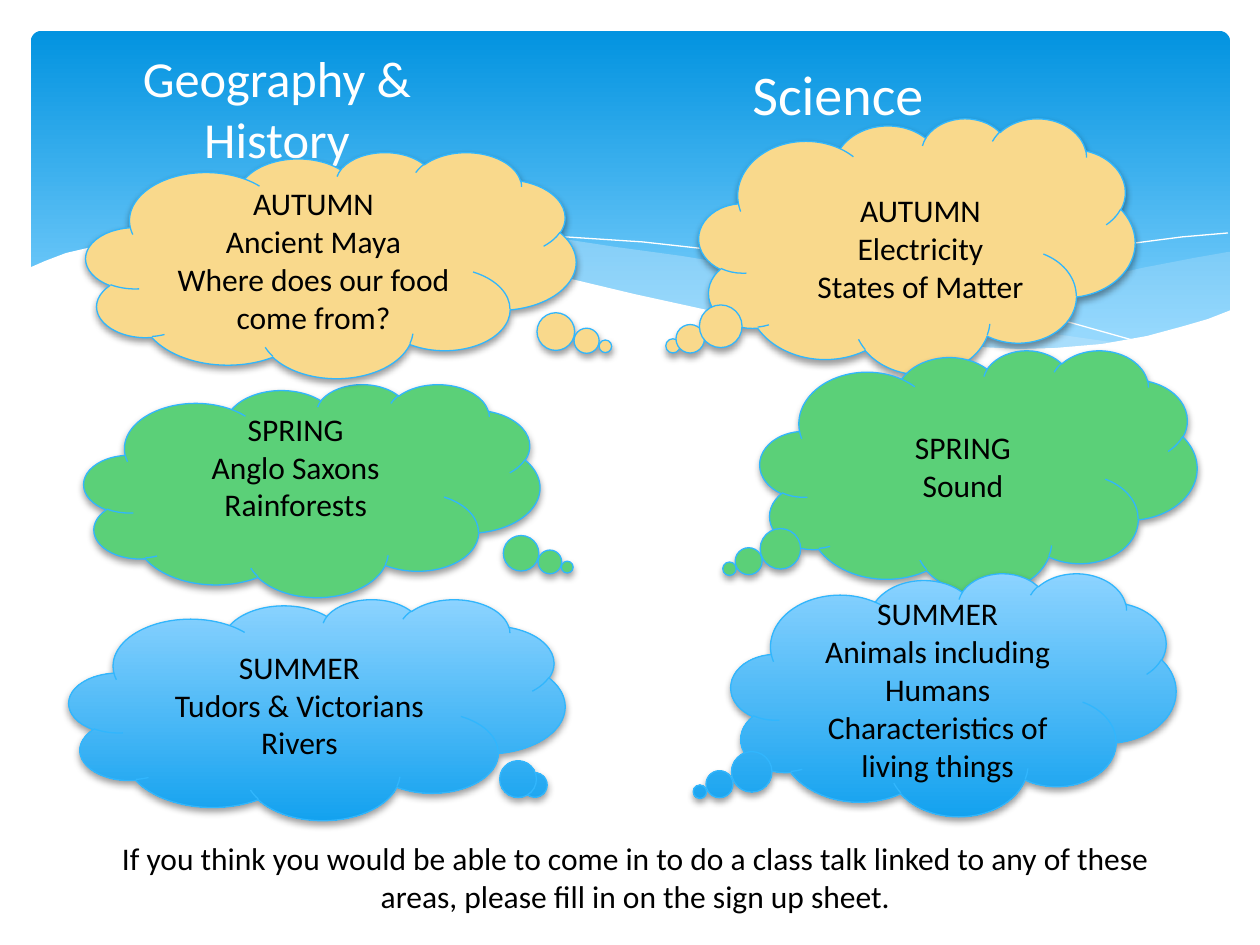
from lxml.etree import SubElement
from pptx import Presentation
from pptx.dml.color import RGBColor
from pptx.enum.shapes import MSO_SHAPE
from pptx.enum.text import MSO_ANCHOR, MSO_AUTO_SIZE, PP_ALIGN
from pptx.oxml.ns import qn
from pptx.util import Emu, Pt

SCALE = 914400 / 126
YELLOW, GREEN, BLUE = "F9D98C", "5BD078", ("8CD3FF", "14A2EF")
BLACK, WHITE, OUTLINE, PALE = "000000", "FFFFFF", "31B6FD", "C6E7FC"

PALE_RIGHT = [
    (1228, 252), (1194, 258), (1142, 268), (1085, 281), (1014, 298), (949, 312),
    (890, 324), (833, 334), (871, 339), (922, 345), (969, 349), (1026, 350),
    (1076, 348), (1120, 342), (1160, 334), (1196, 324), (1230, 311), (1230, 252),
]
PALE_MIDDLE = [
    (1125, 344), (1055, 334), (977, 320), (890, 302), (793, 280), (736, 265),
    (682, 256), (616, 247), (557, 238), (503, 234), (455, 233), (413, 236),
    (360, 241), (431, 251), (509, 266), (566, 280), (668, 302), (757, 321),
    (838, 335), (910, 345), (974, 349), (1031, 350), (1080, 349),
]
FALLING_LINE = [
    (389, 246), (422, 241), (457, 237), (505, 236), (567, 237), (643, 242),
    (733, 252), (838, 268), (958, 294), (1047, 316), (1143, 343),
]
RISING_LINE = [
    (772, 324), (823, 310), (907, 289), (978, 272), (1053, 257), (1128, 244),
    (1182, 237), (1228, 233),
]
WHITE_WAVE = [
    (1231, 310), (1208, 319), (1184, 326), (1147, 336), (1102, 344), (1055, 348),
    (1019, 349), (959, 346), (892, 340), (816, 330), (730, 315), (634, 294),
    (563, 277), (493, 261), (428, 248), (368, 239), (315, 234), (266, 232),
    (223, 232), (184, 233), (150, 236), (120, 241), (96, 246), (66, 253),
    (45, 261), (29, 268), (29, 415), (1231, 415),
]
CLOUDS = [
    ((699, 118, 436, 256), (-0.56, 0.39), YELLOW, [], 0),
    ((69, 599, 496, 221), (0.45, 0.35), BLUE,
     ["SUMMER", "Tudors & Victorians", "Rivers"], 0),
    ((84, 384, 456, 213), (0.56, 0.36), GREEN,
     ["SPRING", "Anglo Saxons", "Rainforests"], 38),
    ((760, 350, 437, 243), (-0.57, 0.4), GREEN, ["SPRING", "Sound"], 0),
    ((731, 573, 445, 243), (-0.57, 0.4), BLUE,
     ["SUMMER", "Animals including Humans", "Characteristics of living things"], 0),
    ((86, 152, 490, 226), (0.56, 0.36), YELLOW,
     ["AUTUMN", "Ancient Maya", "Where does our food come from?"], 0),
]


def px(length):
    """Turn pixels into EMU."""
    return Emu(round(length * SCALE))


def color(code):
    """Turn a hex string into a colour."""
    return RGBColor.from_string(code)


def paint(shape, fill, last_stop=1.0):
    """Fill a shape with one colour, or from top to bottom with two."""
    if isinstance(fill, str):
        shape.fill.solid()
        shape.fill.fore_color.rgb = color(fill)
        return
    shape.fill.gradient()
    shape.fill.gradient_angle = 270
    for stop, code, position in zip(shape.fill.gradient_stops, fill, (0, last_stop)):
        stop.color.rgb = color(code)
        stop.position = position


def write(box, lines, size=18, ink=BLACK, align=PP_ALIGN.CENTER,
          anchor=MSO_ANCHOR.TOP, lift=0):
    """Write formatted lines into a shape, lifted by extra bottom margin."""
    frame = box.text_frame
    frame.word_wrap = True
    frame.auto_size = MSO_AUTO_SIZE.NONE
    frame.vertical_anchor = anchor
    frame.margin_bottom = px(6 + lift)
    for index, line in enumerate(lines):
        para = frame.add_paragraph() if index else frame.paragraphs[0]
        para.alignment = align
        span = para.add_run()
        span.text = line
        span.font.name = "Calibri"
        span.font.size = Pt(size)
        span.font.color.rgb = color(ink)


def add_label(page, place, lines, **style):
    """Add a text box."""
    write(page.shapes.add_textbox(*map(px, place)), lines, **style)


def add_title(page, place, text):
    """Place the title in front of the backdrop."""
    title = page.shapes.title
    title.left, title.top, title.width, title.height = map(px, place)
    title.element.getparent().append(title.element)
    write(title, [text], size=28.8, ink=WHITE, anchor=MSO_ANCHOR.MIDDLE)


def add_panel(page, place):
    """Add the rounded gradient panel."""
    panel = page.shapes.add_shape(MSO_SHAPE.ROUNDED_RECTANGLE, *map(px, place))
    panel.adjustments[0] = 0.03
    panel.shadow.inherit = False
    panel.line.fill.background()
    paint(panel, ("0293E0", "83D3FE"), last_stop=0.9)


def draw_path(page, points, close):
    """Build an outline through points."""
    builder = page.shapes.build_freeform(*points[0], scale=SCALE)
    builder.add_line_segments(points[1:], close=close)
    shape = builder.convert_to_shape()
    shape.shadow.inherit = False
    return shape


def add_wave(page, points, fill, opacity=100):
    """Add a filled wave."""
    wave = draw_path(page, points, True)
    wave.line.fill.background()
    paint(wave, fill)
    tint = wave.element.spPr.find(qn("a:solidFill"))[0]
    SubElement(tint, qn("a:alpha"), val=str(opacity * 1000))


def add_hairline(page, points):
    """Add a thin white curve."""
    curve = draw_path(page, points, False)
    curve.fill.background()
    curve.line.color.rgb = color(WHITE)
    curve.line.width = 0


def add_cloud(page, place, tail, fill, lines, lift):
    """Add a shadowed thought cloud."""
    cloud = page.shapes.add_shape(MSO_SHAPE.CLOUD_CALLOUT, *map(px, place))
    cloud.adjustments[0], cloud.adjustments[1] = tail
    paint(cloud, fill)
    cloud.line.color.rgb = color(OUTLINE)
    cloud.line.width = Pt(0.75)
    cloud.shadow.inherit = False
    effects = cloud.element.spPr.find(qn("a:effectLst"))
    shadow = SubElement(effects, qn("a:outerShdw"), blurRad=str(Pt(4)),
                        dist=str(Pt(2)), dir="5400000", rotWithShape="0")
    shade = SubElement(shadow, qn("a:srgbClr"), val=BLACK)
    SubElement(shade, qn("a:alpha"), val="38000")
    write(cloud, lines, anchor=MSO_ANCHOR.MIDDLE, lift=lift)


def main():
    """Build and save the slide."""
    deck = Presentation()
    deck.slide_width, deck.slide_height = px(1260), px(945)
    page = deck.slides.add_slide(deck.slide_layouts[5])
    add_panel(page, (31, 31, 1199, 340))
    add_wave(page, PALE_RIGHT, PALE, opacity=29)
    add_wave(page, PALE_MIDDLE, PALE, opacity=40)
    add_hairline(page, FALLING_LINE)
    add_hairline(page, RISING_LINE)
    add_wave(page, WHITE_WAVE, WHITE)
    add_title(page, (72, 52, 410, 111), "Geography & History")
    for cloud in CLOUDS:
        add_cloud(page, *cloud)
    add_label(page, (740, 53, 213, 81), ["Science"], size=32, ink=WHITE,
              align=PP_ALIGN.LEFT)
    add_label(page, (793, 185, 255, 127),
              ["AUTUMN", "Electricity", "States of Matter"])
    add_label(page, (74, 833, 1123, 89),
              ["If you think you would be able to come in to do a class talk "
               "linked to any of these areas, please fill in on the sign up sheet."])
    deck.save("out.pptx")


if __name__ == "__main__":
    main()
